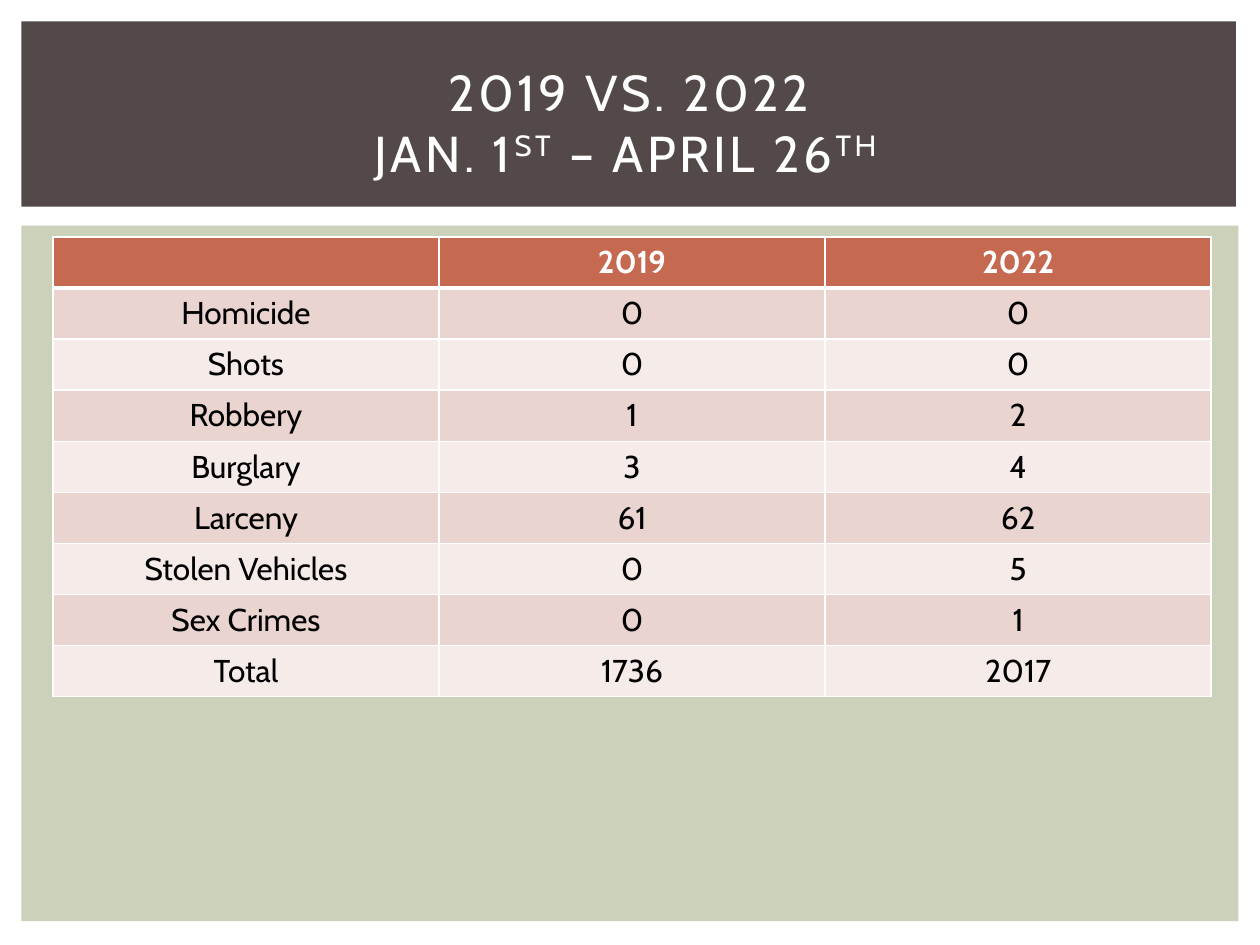
from dataclasses import dataclass

from lxml.etree import SubElement
from pptx import Presentation
from pptx.dml.color import RGBColor
from pptx.enum.shapes import MSO_SHAPE
from pptx.enum.text import MSO_ANCHOR, PP_ALIGN
from pptx.oxml.ns import qn
from pptx.util import Pt

TITLE_LINES = [
    [("2019 VS. 2022", False)],
    [("JAN. 1", False), ("ST", True), (" – APRIL 26", False), ("TH ", True)],
]
CRIME_COUNTS = [
    ("", "2019", "2022"),
    ("Homicide", "0", "0"),
    ("Shots", "0", "0"),
    ("Robbery", "1", "2"),
    ("Burglary", "3", "4"),
    ("Larceny", "61", "62"),
    ("Stolen Vehicles", "0", "5"),
    ("Sex Crimes", "0", "1"),
    ("Total", "1736", "2017"),
]


@dataclass(frozen=True)
class Theme:
    font: str = "Cabin"
    title_size: float = 28.8
    title_spacing: float = 2
    table_size: float = 18
    white: str = "FFFFFF"
    black: str = "000000"
    banner: str = "534949"
    body: str = "CCD1B9"
    header: str = "C66951"
    bands: tuple = ("EAD4D0", "F5EBE9")


THEME = Theme()
BODY = (12.24, 128.88, 695.52, 397.44)
BANNER = (12.24, 12.24, 694.08, 105.84)
TITLE = (30.24, 28.08, 660.24, 82.8)
TABLE = (30.24, 135.36, 661.92, 262.8)


def points(box):
    return [Pt(length) for length in box]


def add_panel(slide, box, color):
    panel = slide.shapes.add_shape(MSO_SHAPE.RECTANGLE, *points(box))
    panel.shadow.inherit = False
    panel.fill.solid()
    panel.fill.fore_color.rgb = RGBColor.from_string(color)
    panel.line.fill.background()


def style_font(font, size, color, bold=False):
    font.name = THEME.font
    font.size = Pt(size)
    font.bold = bold
    font.color.rgb = RGBColor.from_string(color)


def add_title(slide):
    frame = slide.shapes.add_textbox(*points(TITLE)).text_frame
    frame.word_wrap = True
    frame.vertical_anchor = MSO_ANCHOR.MIDDLE
    heading = frame.paragraphs[0]
    heading.alignment = PP_ALIGN.CENTER
    for index, line in enumerate(TITLE_LINES):
        if index:
            heading.add_line_break()
        for wording, raised in line:
            run = heading.add_run()
            run.text = wording
            style_font(run.font, THEME.title_size, THEME.white)
            properties = run._r.get_or_add_rPr()
            properties.set("spc", str(int(THEME.title_spacing * 100)))
            if raised:
                properties.set("baseline", "30000")


def add_borders(cell, widths):
    properties = cell._tc.get_or_add_tcPr()
    for side, width in widths.items():
        border = SubElement(properties, qn(f"a:ln{side}"), w=str(Pt(width)))
        fill = SubElement(border, qn("a:solidFill"))
        SubElement(fill, qn("a:srgbClr"), val=THEME.white)


def style_cell(cell, row):
    is_header = row == 0
    add_borders(cell, {"L": 1, "R": 1, "T": 3 if row == 1 else 1, "B": 3 if is_header else 1})
    cell.fill.solid()
    color = THEME.header if is_header else THEME.bands[(row - 1) % 2]
    cell.fill.fore_color.rgb = RGBColor.from_string(color)
    label = cell.text_frame.paragraphs[0]
    label.alignment = PP_ALIGN.CENTER
    style_font(label.font, THEME.table_size, THEME.white, is_header)
    for run in label.runs:
        style_font(run.font, THEME.table_size, THEME.white if is_header else THEME.black, is_header)


def add_crime_table(slide):
    rows, columns = len(CRIME_COUNTS), len(CRIME_COUNTS[0])
    table = slide.shapes.add_table(rows, columns, *points(TABLE)).table
    for row, values in enumerate(CRIME_COUNTS):
        for column, value in enumerate(values):
            cell = table.cell(row, column)
            cell.text_frame.text = value
            style_cell(cell, row)


def main():
    """Build the slide comparing crime counts for 2019 and 2022."""
    deck = Presentation()
    deck.slide_width, deck.slide_height = Pt(720), Pt(540)
    slide = deck.slides.add_slide(deck.slide_layouts[6])
    add_panel(slide, BODY, THEME.body)
    add_panel(slide, BANNER, THEME.banner)
    add_crime_table(slide)
    add_title(slide)
    deck.save("out.pptx")


if __name__ == "__main__":
    main()
